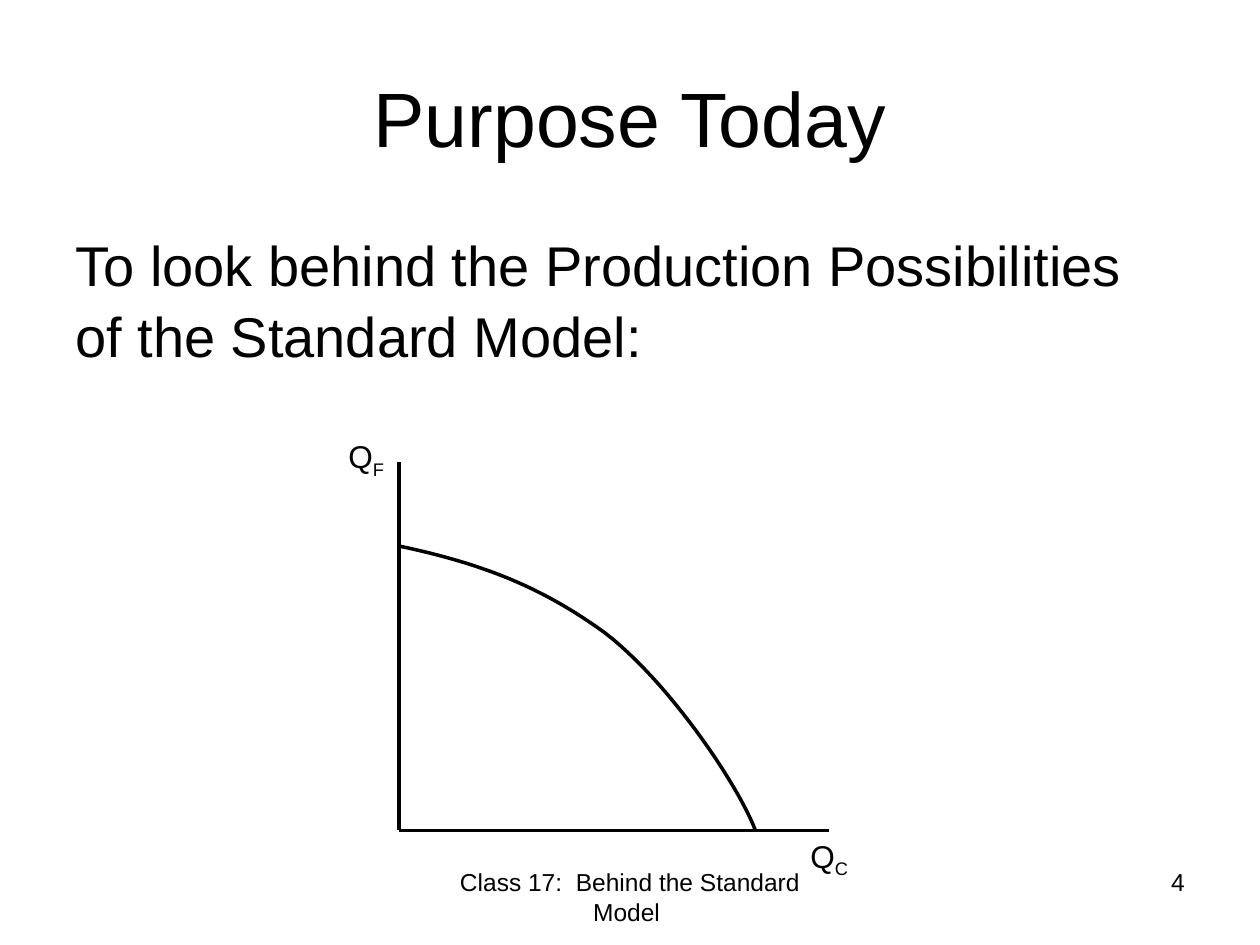
from pptx import Presentation
from pptx.dml.color import RGBColor
from pptx.enum.shapes import MSO_CONNECTOR as Connector
from pptx.enum.text import MSO_ANCHOR as Anchor, PP_ALIGN as Align
from pptx.oxml.ns import qn
from pptx.util import Pt
from lxml.etree import SubElement

BLACK = RGBColor(0, 0, 0)
FONT = "Arial"
LINE_WIDTH = 2
CURVE_STEPS = 24


def place(shape, box):
    shape.left, shape.top, shape.width, shape.height = (Pt(side) for side in box)


def add_span(para, text, size):
    span = para.add_run()
    span.text = text
    span.font.name, span.font.size = FONT, Pt(size)
    span.font.color.rgb = BLACK
    return span


def add_text(page, box, text, size, align=Align.LEFT):
    frame = page.shapes.add_textbox(*(Pt(side) for side in box)).text_frame
    frame.word_wrap = True
    para = frame.paragraphs[0]
    para.alignment = align
    add_span(para, text, size)
    return para


def add_title(page, box, text):
    title = page.shapes.title
    place(title, box)
    title.text_frame.vertical_anchor = Anchor.MIDDLE
    para = title.text_frame.paragraphs[0]
    para.alignment = Align.CENTER
    add_span(para, text, 44)


def add_body(page, box, text):
    para = add_text(page, box, text, 32)
    para.line_spacing = 1.06


def add_footer(page, box, text, number):
    left, top, width, height = box
    add_text(page, (left + 210, top, 228, height), text, 14, Align.CENTER)
    add_text(page, (left + width - 168, top, 168, height), number, 14, Align.RIGHT)


def draw_line(shape):
    shape.line.color.rgb = BLACK
    shape.line.width = Pt(LINE_WIDTH)


def add_axis(page, start, end):
    axis = page.shapes.add_connector(Connector.STRAIGHT, *(Pt(v) for v in (*start, *end)))
    draw_line(axis)
    SubElement(axis._element.spPr, qn("a:effectLst"))


def add_axis_label(page, left, top, subscript):
    para = add_text(page, (left, top, 54, 51), "Q", 18)
    span = add_span(para, subscript, 18)
    span.font._element.set("baseline", "-25000")


def bezier(points, t):
    weights = ((1 - t) ** 3, 3 * t * (1 - t) ** 2, 3 * t * t * (1 - t), t ** 3)
    return tuple(Pt(sum(w * p[axis] for w, p in zip(weights, points))) for axis in (0, 1))


def add_frontier(page, box):
    """Draw the axes and the bowed-out production possibilities curve."""
    left, top, width, height = box
    origin = (left, top + height)
    add_axis(page, origin, (left + width, top + height))
    add_axis(page, origin, (left, top))

    # Two cubic pieces, as offsets from the top of the vertical axis
    offsets = [(0, 48), (47, 58), (81, 71), (117.5, 97.5),
               (153.5, 125), (193, 183), (203.5, 210)]
    points = [(left + x, top + y) for x, y in offsets]
    outline = [bezier(points[first:first + 4], step / CURVE_STEPS)
               for first in (0, 3) for step in range(CURVE_STEPS + 1)]
    builder = page.shapes.build_freeform(*outline[0])
    builder.add_line_segments(outline[1:], close=False)
    curve = builder.convert_to_shape()
    curve.shadow.inherit = False
    curve.fill.background()
    draw_line(curve)

    # Axis labels
    add_axis_label(page, left + width - 18, top + height, "C")
    add_axis_label(page, left - 36, top - 18, "F")


def main():
    deck = Presentation()
    deck.slide_width, deck.slide_height = Pt(720), Pt(540)
    page = deck.slides.add_slide(deck.slide_layouts[5])
    add_title(page, (36, 21.6, 648, 90), "Purpose Today")
    add_body(page, (36, 126, 648, 356.4),
             "To look behind the Production Possibilities of the Standard Model:")
    add_footer(page, (36, 492, 648, 37.5), "Class 17:  Behind the Standard Model ", "4")
    add_frontier(page, (228, 264, 246, 210.5))
    deck.save("out.pptx")


if __name__ == "__main__":
    main()
